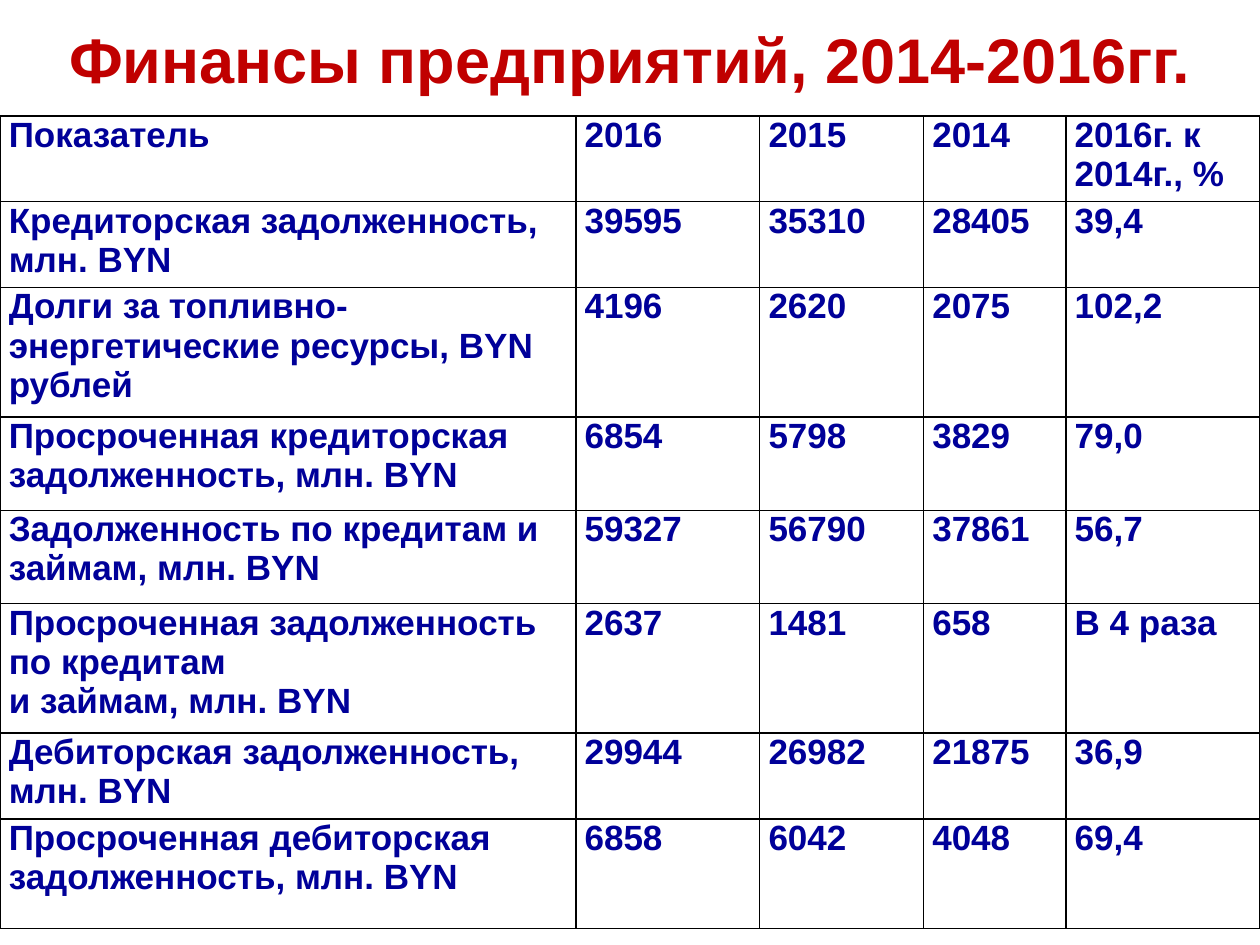
from lxml import etree
from pptx import Presentation
from pptx import util as u
from pptx.dml.color import RGBColor
from pptx.enum import text
from pptx.oxml import ns

COLORS = {"title": "C00000", "outline": "FFFF00", "body": "000099", "border": "000000"}
TITLE_FONT = {"name": "Arial", "size": u.Pt(36), "bold": True}
BODY_FONT = {"name": "Arial", "size": u.Pt(20), "bold": True}
CELL_FORMAT = {
    "margin_left": u.Inches(0.07),
    "margin_right": u.Inches(0.07),
    "margin_top": 0,
    "margin_bottom": 0,
    "vertical_anchor": text.MSO_ANCHOR.TOP,
}

COLUMN_WIDTHS = [4.57, 1.46, 1.3, 1.13, 1.54]
# Row height, then the texts of the row
FINANCE_ROWS = [
    (0.68, "Показатель", "2016", "2015", "2014", "2016г. к 2014г., %"),
    (0.68, "Кредиторская задолженность, млн. BYN", "39595", "35310", "28405", "39,4"),
    (1.03, "Долги за топливно-энергетические ресурсы, BYN рублей",
     "4196", "2620", "2075", "102,2"),
    (0.74, "Просроченная кредиторская задолженность, млн. BYN",
     "6854", "5798", "3829", "79,0"),
    (0.74, "Задолженность по кредитам и займам, млн. BYN",
     "59327", "56790", "37861", "56,7"),
    (1.03, "Просроченная задолженность по кредитам\nи займам, млн. BYN",
     "2637", "1481", "658", "В 4 раза"),
    (0.68, "Дебиторская задолженность, млн. BYN", "29944", "26982", "21875", "36,9"),
    (0.87, "Просроченная дебиторская задолженность, млн. BYN",
     "6858", "6042", "4048", "69,4"),
]


def set_attributes(target, values):
    for name, value in values.items():
        setattr(target, name, value)


def format_runs(frame, font_format, color):
    for paragraph in frame.paragraphs:
        for run in paragraph.runs:
            set_attributes(run.font, font_format)
            run.font.color.rgb = RGBColor.from_string(color)


def line_element(tag, width, color):
    line = etree.Element(ns.qn(tag), w=str(u.Pt(width)))
    fill = etree.SubElement(line, ns.qn("a:solidFill"))
    etree.SubElement(fill, ns.qn("a:srgbClr"), val=color)
    return line


def add_title(slide, wording):
    title = slide.shapes.title
    set_attributes(title, {"left": 0, "top": 0,
                           "width": u.Inches(10), "height": u.Inches(0.92)})
    frame = title.text_frame
    frame.text = wording
    frame.vertical_anchor = text.MSO_ANCHOR.MIDDLE
    heading = frame.paragraphs[0]
    heading.alignment = text.PP_ALIGN.CENTER
    format_runs(frame, TITLE_FONT, COLORS["title"])
    # Thin outline around the letters
    heading.runs[0].font._element.insert(0, line_element("a:ln", 0.75, COLORS["outline"]))


def fill_cell(cell, wording):
    cell.text = wording
    set_attributes(cell, CELL_FORMAT)
    format_runs(cell.text_frame, BODY_FONT, COLORS["body"])
    cell.fill.background()
    # Borders come before the fill in the cell properties
    properties = cell._tc.get_or_add_tcPr()
    for index, side in enumerate(("a:lnL", "a:lnR", "a:lnT", "a:lnB")):
        properties.insert(index, line_element(side, 1, COLORS["border"]))


def add_finance_table(slide):
    height = sum(row[0] for row in FINANCE_ROWS)
    table = slide.shapes.add_table(
        len(FINANCE_ROWS), len(COLUMN_WIDTHS),
        0, u.Inches(0.92), u.Inches(10), u.Inches(height)).table
    set_attributes(table, {"first_row": False, "horz_banding": False})
    for column, width in zip(table.columns, COLUMN_WIDTHS):
        column.width = u.Inches(width)
    for row, (row_height, *wordings) in zip(table.rows, FINANCE_ROWS):
        row.height = u.Inches(row_height)
        for cell, wording in zip(row.cells, wordings):
            fill_cell(cell, wording)


def main():
    deck = Presentation()
    set_attributes(deck, {"slide_width": u.Inches(10), "slide_height": u.Inches(7.5)})
    slide = deck.slides.add_slide(deck.slide_layouts[5])  # title only
    add_title(slide, "Финансы предприятий, 2014-2016гг.")
    add_finance_table(slide)
    deck.save("out.pptx")


if __name__ == "__main__":
    main()
